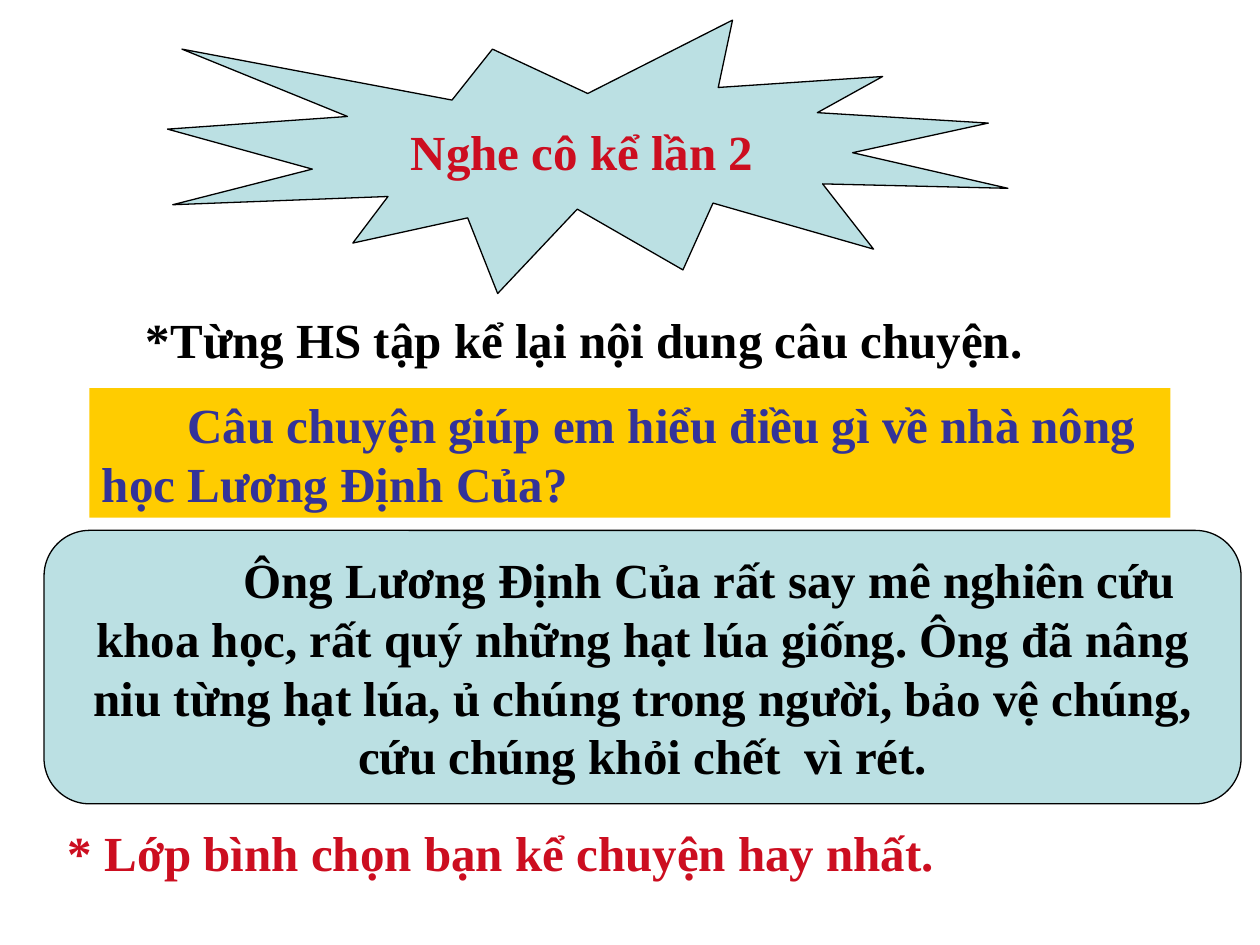
from pptx import Presentation
from pptx.dml.color import RGBColor
from pptx.enum.shapes import MSO_SHAPE
from pptx.enum.text import MSO_ANCHOR, MSO_AUTO_SIZE, PP_ALIGN
from pptx.util import Inches, Pt

COLORS = {
    "red": "CC0E20",
    "black": "000000",
    "blue": "333399",
    "yellow": "FFCC00",
    "pale": "BBE0E3",
}
TITLE_ONLY = 5


def color(name):
    return RGBColor.from_string(COLORS[name])


def write_text(shape, lines, text_color, align=PP_ALIGN.LEFT, anchor=MSO_ANCHOR.TOP):
    frame = shape.text_frame
    frame.text = "\n".join(lines)
    frame.word_wrap = True
    frame.auto_size = MSO_AUTO_SIZE.NONE
    frame.vertical_anchor = anchor
    for paragraph in frame.paragraphs:
        paragraph.alignment = align
        paragraph.font.name = "Times New Roman"
        paragraph.font.size = Pt(28)
        paragraph.font.bold = True
        paragraph.font.color.rgb = color(text_color)


def indent_first_line(shape, margin=0, indent=0):
    properties = shape.text_frame.paragraphs[0]._p.get_or_add_pPr()
    properties.set("marL", str(Inches(margin)))
    properties.set("indent", str(Inches(indent)))


def add_panel(slide, kind, box, fill, outlined=True):
    shape = slide.shapes.add_shape(kind, *map(Inches, box))
    shape.shadow.inherit = False
    shape.fill.solid()
    shape.fill.fore_color.rgb = color(fill)
    if outlined:
        shape.line.color.rgb = color("black")
        shape.line.width = Pt(0.75)
    else:
        shape.line.fill.background()
    return shape


def add_note(slide, box, text, text_color):
    note = slide.shapes.add_textbox(*map(Inches, box))
    write_text(note, [text], text_color)


def place_title(slide, box, text):
    title = slide.shapes.title
    title.left, title.top, title.width, title.height = map(Inches, box)
    write_text(title, [text], "red", PP_ALIGN.CENTER, MSO_ANCHOR.MIDDLE)
    # Bring the title in front of the starburst
    slide.shapes._spTree.append(title._element)


def main():
    presentation = Presentation()
    presentation.slide_width = Inches(10)
    presentation.slide_height = Inches(7.5)
    slide = presentation.slides.add_slide(presentation.slide_layouts[TITLE_ONLY])

    # Starburst with the title
    add_panel(slide, MSO_SHAPE.EXPLOSION1, (1.33, 0.16, 6.67, 2.17), "pale")
    place_title(slide, (2.87, 0.8, 3.5, 0.8), "Nghe cô kể lần 2")

    # Retelling task
    add_note(slide, (1.06, 2.41, 8.08, 0.57),
             "*Từng HS tập kể lại nội dung câu chuyện.", "black")

    # Question
    question = add_panel(slide, MSO_SHAPE.RECTANGLE, (0.71, 3.08, 8.58, 1.03),
                         "yellow", outlined=False)
    write_text(question, ["Câu chuyện giúp em hiểu điều gì về nhà nông học Lương Định Của?"],
               "blue")
    indent_first_line(question, indent=0.68)

    # Answer
    answer = add_panel(slide, MSO_SHAPE.FLOWCHART_ALTERNATE_PROCESS,
                       (0.35, 4.21, 9.5, 2.17), "pale")
    write_text(answer, [
        "Ông Lương Định Của rất say mê nghiên cứu",
        "khoa học, rất quý những hạt lúa giống. Ông đã nâng",
        "niu từng hạt lúa, ủ chúng trong người, bảo vệ chúng,",
        "cứu chúng khỏi chết  vì rét.",
    ], "black", PP_ALIGN.CENTER, MSO_ANCHOR.MIDDLE)
    indent_first_line(answer, margin=1.06)

    # Class vote
    add_note(slide, (0.44, 6.48, 9.33, 0.57),
             "* Lớp bình chọn bạn kể chuyện hay nhất.", "red")

    presentation.save("out.pptx")


if __name__ == "__main__":
    main()
